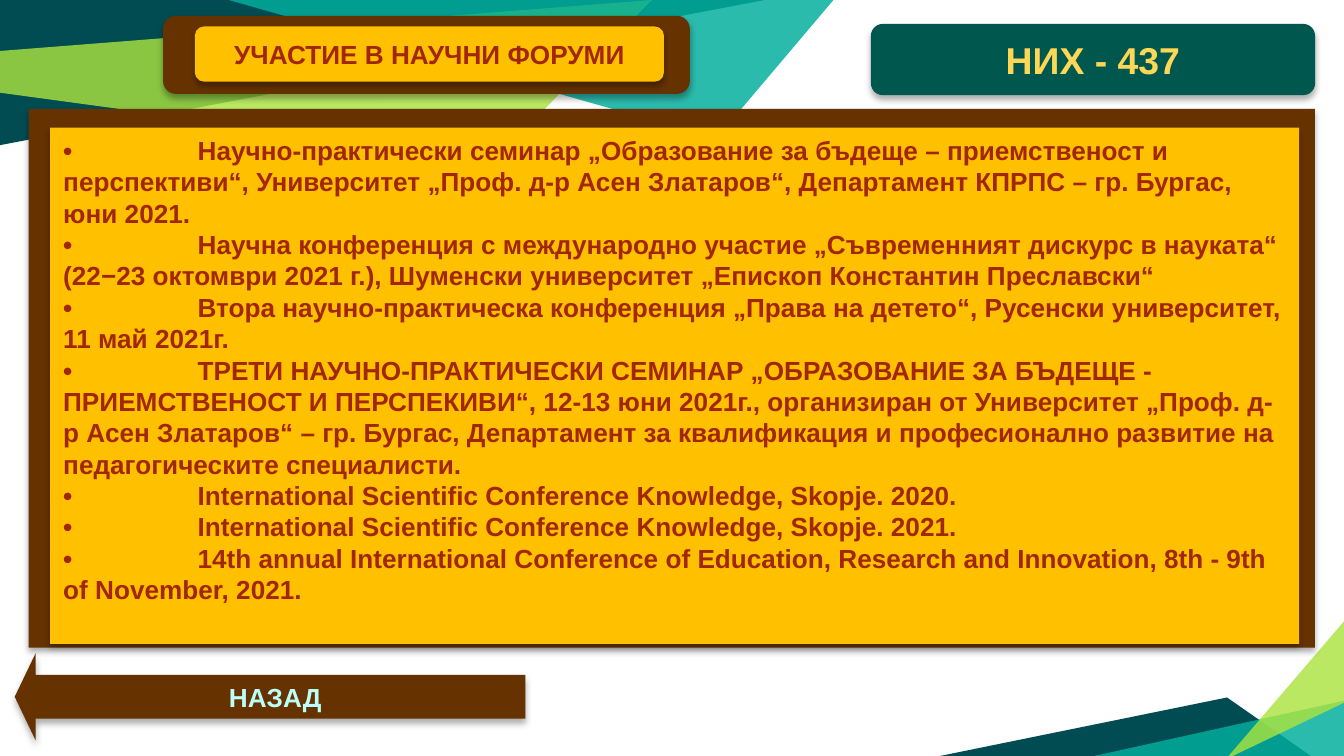
from lxml.etree import SubElement
from pptx import Presentation
from pptx.dml.color import RGBColor
from pptx.enum.shapes import MSO_SHAPE as Shape
from pptx.enum.text import MSO_ANCHOR as Anchor, PP_ALIGN as Align
from pptx.oxml.ns import qn
from pptx.util import Inches, Pt

# Content
FORUMS = [
    "Научно-практически семинар „Образование за бъдеще – приемственост и перспективи“, "
    "Университет „Проф. д-р Асен Златаров“, Департамент КПРПС – гр. Бургас, юни 2021.",
    "Научна конференция с международно участие „Съвременният дискурс в науката“ "
    "(22−23 октомври 2021 г.), Шуменски университет „Епископ Константин Преславски“",
    "Втора научно-практическа конференция „Права на детето“, Русенски университет, 11 май 2021г.",
    "ТРЕТИ НАУЧНО-ПРАКТИЧЕСКИ СЕМИНАР „ОБРАЗОВАНИЕ ЗА БЪДЕЩЕ - ПРИЕМСТВЕНОСТ И ПЕРСПЕКИВИ“, "
    "12-13 юни 2021г., организиран от Университет „Проф. д-р Асен Златаров“ – гр. Бургас, "
    "Департамент за квалификация и професионално развитие на педагогическите специалисти.",
    "International Scientific Conference Knowledge, Skopje. 2020.",
    "International Scientific Conference Knowledge, Skopje. 2021.",
    "14th annual International Conference of Education, Research and Innovation, "
    "8th - 9th of November, 2021.",
]
TITLE, CODE, BACK = "УЧАСТИЕ В НАУЧНИ ФОРУМИ", "НИХ - 437", "НАЗАД"

THEME = {
    "font": "Arial", "body": 14, "large": 20,
    "brown": "663300", "gold": "FFC000", "green": "00574E",
    "rust": "A22700", "mint": "BCFFF8", "yellow": "FFD757",
    "navy": "004C52", "lime": "ABE33F", "teal": "00AE9D",
    "shadow": {"blur": 3.5, "distance": 2.2, "angle": 90, "opacity": 32},
}
WIDTH = 10
HEIGHT = WIDTH * 9 / 16

# Background facets: colour, opacity in percent, corners in inches
FACETS = [
    ("navy", 100, [(0, 0), (0, 1.08), (5.69, 0)]),
    ("lime", 81, [(-0.01, 0.38), (0, 0.69), (3.68, 1.19), (4.85, 0)]),
    ("navy", 100, [(6.97, 5.63), (9.76, 5.63), (9.13, 5.19)]),
    ("teal", 83, [(10.02, 5.21), (10.02, 5.65), (8.03, 5.65)]),
    ("lime", 81, [(10.02, 5.22), (10.02, 4.6), (9.12, 5.65)]),
    ("teal", 83, [(1.7, 0), (5.33, 1.03), (6.21, -0.01), (6.09, 0)]),
]

# Panels: preset, left, top, width and height in percent of the slide, colour, text format
CENTRED = {"size": "body", "align": Align.CENTER, "anchor": Anchor.MIDDLE}
LISTED = {"size": "body", "align": Align.LEFT, "anchor": Anchor.TOP, "tab": 1}
PANELS = [
    (Shape.RECTANGLE, (2.14, 14.4, 95.7, 71.29), "brown", [], {}),
    (Shape.RECTANGLE, (3.72, 16.9, 92.95, 68.27), "gold",
     [f"•\t{forum}" for forum in FORUMS], {**LISTED, "color": "rust"}),
    (Shape.LEFT_ARROW, (1.1, 86.4, 38, 11.56), "brown",
     [BACK], {**CENTRED, "color": "mint"}),
    (Shape.ROUNDED_RECTANGLE, (12.13, 2.1, 39.2, 10.33), "brown", [], {}),
    (Shape.ROUNDED_RECTANGLE, (14.5, 3.5, 34.9, 7.3), "gold",
     [TITLE], {**CENTRED, "color": "rust"}),
    (Shape.ROUNDED_RECTANGLE, (64.8, 3.17, 33.05, 9.42), "green",
     [CODE], {**CENTRED, "color": "yellow", "size": "large"}),
]
ARROW_HEAD = 0.24


def rgb(name):
    return RGBColor.from_string(THEME[name])


def paint(shape, color, opacity=100):
    shape.shadow.inherit = False
    shape.fill.solid()
    shape.fill.fore_color.rgb = rgb(color)
    shape.line.fill.background()
    if opacity < 100:
        tone = shape._element.spPr.find(f"{qn('a:solidFill')}/{qn('a:srgbClr')}")
        SubElement(tone, qn("a:alpha"), val=str(opacity * 1000))


def add_shadow(shape):
    look = THEME["shadow"]
    effects = shape._element.spPr.find(qn("a:effectLst"))
    outer = SubElement(effects, qn("a:outerShdw"), blurRad=str(Pt(look["blur"])),
                       dist=str(Pt(look["distance"])), dir=str(look["angle"] * 60000),
                       algn="ctr", rotWithShape="0")
    tone = SubElement(outer, qn("a:srgbClr"), val="000000")
    SubElement(tone, qn("a:alpha"), val=str(look["opacity"] * 1000))


def add_tab_stop(para, inches):
    stops = SubElement(para._p.get_or_add_pPr(), qn("a:tabLst"))
    SubElement(stops, qn("a:tab"), pos=str(Inches(inches)), algn="l")


def write(shape, lines, style):
    frame = shape.text_frame
    frame.word_wrap = True
    frame.vertical_anchor = style["anchor"]
    font_values = {"name": THEME["font"], "size": Pt(THEME[style["size"]]), "bold": True}
    for index, line in enumerate(lines):
        para = frame.add_paragraph() if index else frame.paragraphs[0]
        para.alignment = style["align"]
        if "tab" in style:
            add_tab_stop(para, style["tab"])
        span = para.add_run()
        span.text = line
        for key, value in font_values.items():
            setattr(span.font, key, value)
        span.font.color.rgb = rgb(style["color"])


def main():
    deck = Presentation()
    deck.slide_width, deck.slide_height = Inches(WIDTH), Inches(HEIGHT)
    page = deck.slides.add_slide(deck.slide_layouts[6])

    # Background facets
    for color, opacity, corners in FACETS:
        start, *others = [(Inches(x), Inches(y)) for x, y in corners]
        outline = page.shapes.build_freeform(*start)
        outline.add_line_segments(others, close=True)
        paint(outline.convert_to_shape(), color, opacity)

    # Panels, heading plates and back arrow
    for preset, shares, color, lines, style in PANELS:
        place = [Inches(share * side / 100)
                 for share, side in zip(shares, (WIDTH, HEIGHT) * 2)]
        box = page.shapes.add_shape(preset, *place)
        if preset == Shape.LEFT_ARROW:
            box.adjustments[1] = ARROW_HEAD
        paint(box, color)
        add_shadow(box)
        if lines:
            write(box, lines, style)

    deck.save("out.pptx")


if __name__ == "__main__":
    main()
